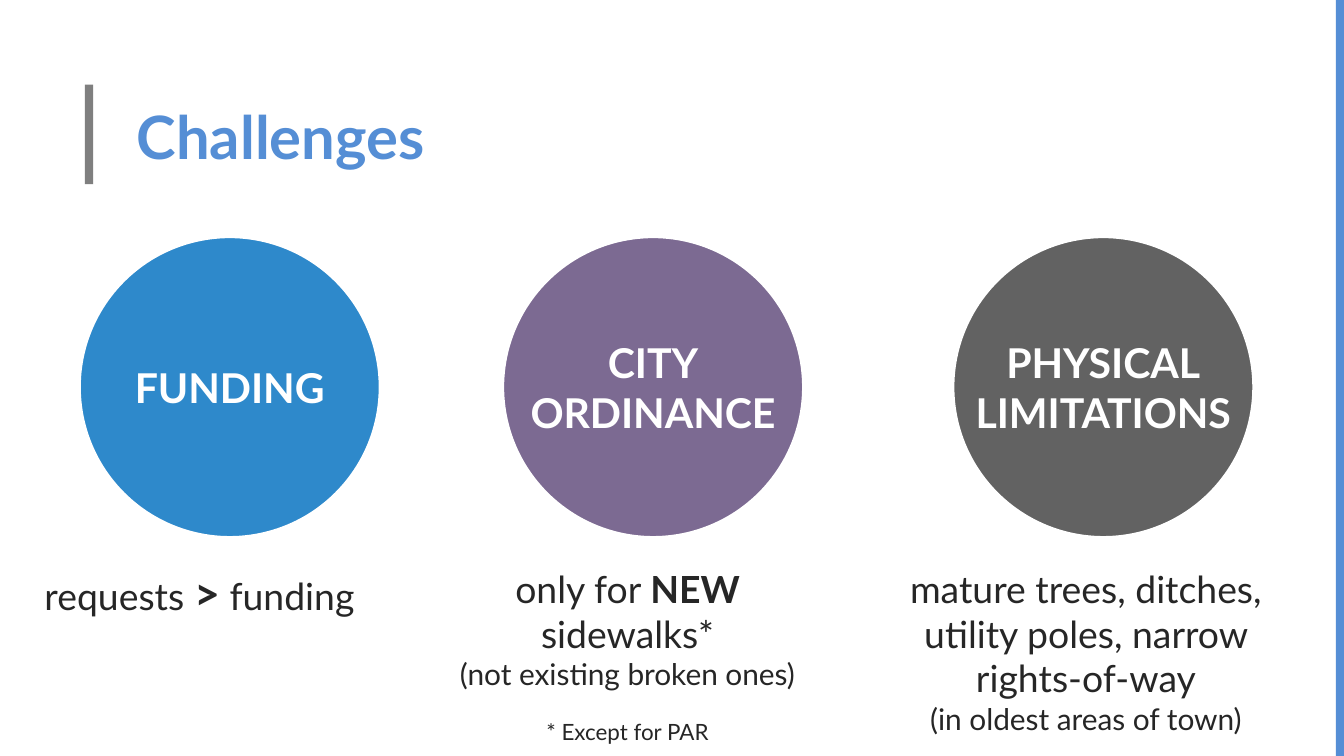
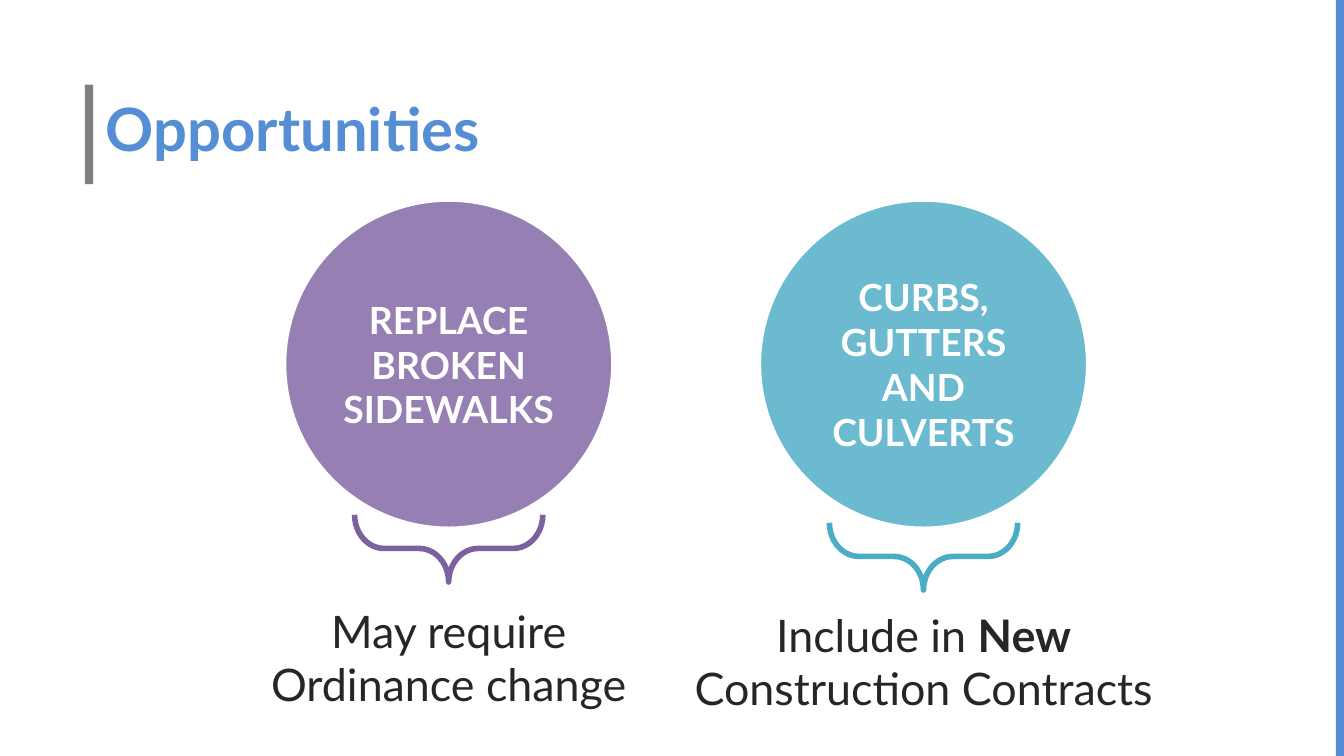
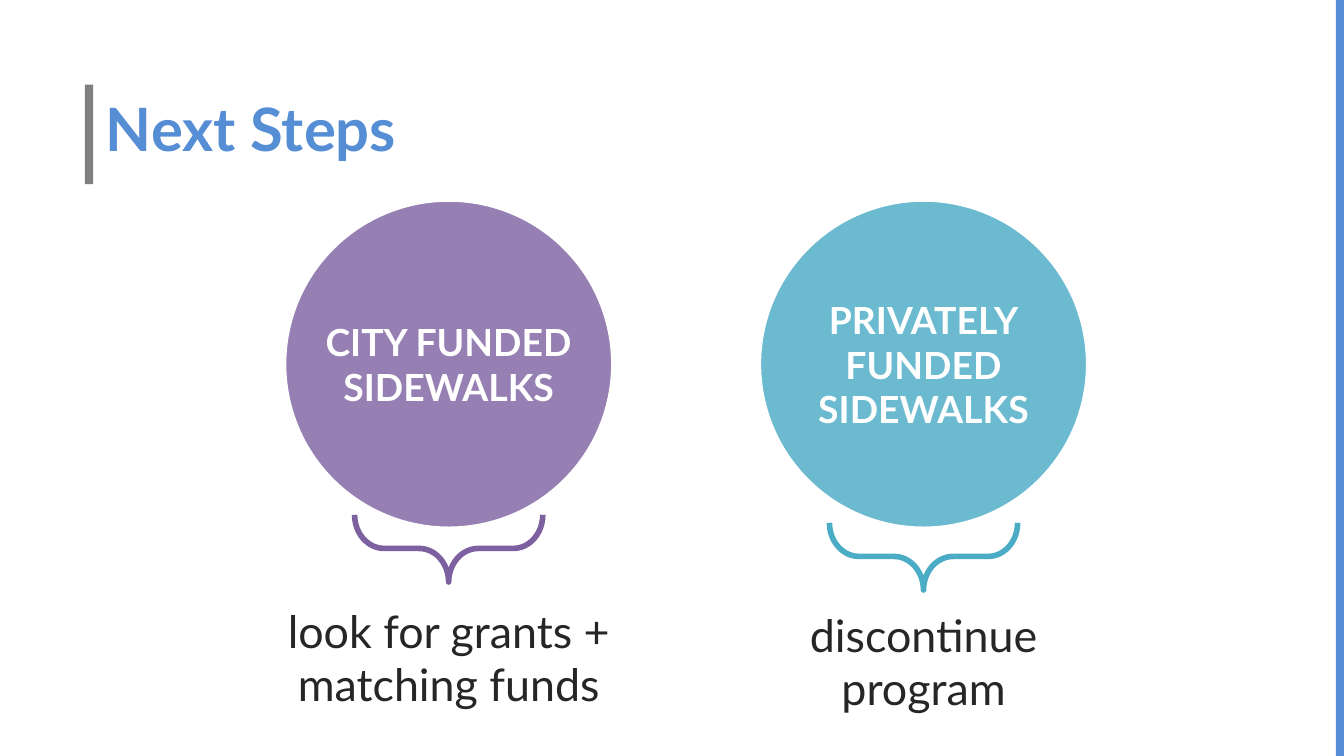
from dataclasses import dataclass

from lxml.etree import SubElement
from pptx import Presentation
from pptx.dml.color import RGBColor
from pptx.enum.shapes import MSO_SHAPE
from pptx.enum.text import MSO_ANCHOR, PP_ALIGN
from pptx.oxml.ns import qn
from pptx.shapes.autoshape import Shape
from pptx.slide import Slide
from pptx.text.text import TextFrame
from pptx.util import Pt


@dataclass(frozen=True)
class Theme:
    font: str = "Lato"
    accent: str = "558ED5"
    rule: str = "7F7F7F"
    ink: str = "262626"
    white: str = "FFFFFF"
    blue: str = "0070C0"
    plum: str = "604A7B"
    charcoal: str = "404040"
    purple: str = "8064A2"
    purple_line: str = "7D60A0"
    teal: str = "4BACC6"
    title_size: float = 32
    large: float = 24
    label_size: float = 22
    medium: float = 20
    small: float = 16
    footnote: float = 12
    circle_opacity: int = 82
    circle_border: float = 6
    brace_line: float = 3
    inset: float = 7.2


THEME = Theme()
SLIDE_W, SLIDE_H = 720, 405


@dataclass(frozen=True)
class Box:
    left: float
    top: float
    width: float
    height: float

    def lengths(self) -> tuple[Pt, Pt, Pt, Pt]:
        return Pt(self.left), Pt(self.top), Pt(self.width), Pt(self.height)


@dataclass(frozen=True)
class Run:
    text: str
    size: float | None = None
    bold: bool | None = None


@dataclass(frozen=True)
class Para:
    runs: tuple[Run, ...]
    space_before: float = 0


@dataclass(frozen=True)
class Challenge:
    label: tuple[str, ...]
    color: str
    circle_left: float
    caption_box: Box
    caption: tuple[Para, ...]


@dataclass(frozen=True)
class Column:
    """Place and colours of one circle with its brace and caption."""
    center: float
    fill: str
    brace_color: str
    brace_top: float
    caption_top: float
    caption_height: float


@dataclass(frozen=True)
class Topic:
    label: tuple[str, ...]
    caption: Para
    caption_width: float
    wrap_label: bool = False


def para(*texts: str | Run, space_before: float = 0) -> Para:
    runs = tuple(Run(t) if isinstance(t, str) else t for t in texts)
    return Para(runs, space_before)


CHALLENGES = (
    Challenge(("FUNDING",), THEME.blue, 40.3, Box(7.9, 296, 198, 71.3), (
        para("requests ", Run(">", THEME.large, True), " funding"),
    )),
    Challenge(("CITY", "ORDINANCE"), THEME.plum, 267.1, Box(227.5, 296, 217.4, 109), (
        para("only for ", Run("NEW", bold=True), " sidewalks*"),
        para(Run("(not existing broken ones)", THEME.small)),
        para(Run("* Except for PAR", THEME.footnote), space_before=14.4),
    )),
    Challenge(("PHYSICAL", "LIMITATIONS"), THEME.charcoal, 508.3, Box(470.2, 296, 223.2, 102.2), (
        para("mature trees, ditches, utility poles, narrow rights-of-way"),
        para(Run("(in oldest areas of town)", THEME.small)),
    )),
)

COLUMNS = (
    Column(240.4, THEME.purple, THEME.purple_line, 243.4, 316, 71.3),
    Column(494.8, THEME.teal, THEME.teal, 247.7, 318.2, 67.7),
)

TOPIC_SLIDES = {
    "Opportunities": (
        Topic(("REPLACE", "BROKEN", "SIDEWALKS"), para("May require Ordinance change"), 239),
        Topic(("CURBS, GUTTERS AND CULVERTS",),
              para("Include in ", Run("New", bold=True), " Construction Contracts"),
              265, wrap_label=True),
    ),
    "Next Steps": (
        Topic(("CITY FUNDED", "SIDEWALKS"), para("look for grants + matching funds"), 206),
        Topic(("PRIVATELY", "FUNDED", "SIDEWALKS"), para("discontinue program"), 156.2),
    ),
}


def rgb(color: str) -> RGBColor:
    return RGBColor.from_string(color)


def write(tf: TextFrame, paras: tuple[Para, ...], *, size: float, color: str,
          bold: bool = False, align: PP_ALIGN = PP_ALIGN.CENTER,
          anchor: MSO_ANCHOR = MSO_ANCHOR.TOP, wrap: bool = True) -> None:
    tf.word_wrap = wrap
    tf.vertical_anchor = anchor
    tf.margin_left = tf.margin_right = tf.margin_top = tf.margin_bottom = Pt(THEME.inset)
    for i, item in enumerate(paras):
        p = tf.add_paragraph() if i else tf.paragraphs[0]
        p.alignment = align
        p.space_before = Pt(item.space_before)
        for run in item.runs:
            r = p.add_run()
            r.text = run.text
            r.font.name = THEME.font
            r.font.size = Pt(run.size or size)
            r.font.bold = bold if run.bold is None else run.bold
            r.font.color.rgb = rgb(color)


def add_text(s: Slide, box: Box, *paras: Para, **fmt) -> None:
    write(s.shapes.add_textbox(*box.lengths()).text_frame, paras, **fmt)


def add_shape(s: Slide, kind: MSO_SHAPE, box: Box, *, fill: str | None = None,
              line: str | None = None, line_width: float = 0) -> Shape:
    sp = s.shapes.add_shape(kind, *box.lengths())
    sp.shadow.inherit = False
    if fill:
        sp.fill.solid()
        sp.fill.fore_color.rgb = rgb(fill)
    else:
        sp.fill.background()
    if line:
        sp.line.color.rgb = rgb(line)
        sp.line.width = Pt(line_width)
    else:
        sp.line.fill.background()
    return sp


def add_circle(s: Slide, left: float, top: float, diameter: float, color: str,
               label: tuple[str, ...], size: float, wrap: bool = False) -> None:
    sp = add_shape(s, MSO_SHAPE.OVAL, Box(left, top, diameter, diameter), fill=color,
                   line=THEME.white, line_width=THEME.circle_border)
    clr = sp.element.spPr.find(qn("a:solidFill")).find(qn("a:srgbClr"))
    SubElement(clr, qn("a:alpha")).set("val", str(THEME.circle_opacity * 1000))
    write(sp.text_frame, tuple(para(text) for text in label), size=size, color=THEME.white,
          bold=True, anchor=MSO_ANCHOR.MIDDLE, wrap=wrap)


def add_brace(s: Slide, center: float, top: float) -> Shape:
    """Draw a brace whose tip points down at the caption."""
    depth, span = 36, 100.8
    return add_shape(s, MSO_SHAPE.LEFT_BRACE, Box(center - depth / 2, top, depth, span))


def add_slide(prs: Presentation, title: str, title_box: Box) -> Slide:
    s = prs.slides.add_slide(prs.slide_layouts[6])
    add_shape(s, MSO_SHAPE.RECTANGLE, Box(45.4, 45.4, 4.5, 53.3), fill=THEME.rule)
    add_shape(s, MSO_SHAPE.RECTANGLE, Box(SLIDE_W - 4.3, 0, 4.3, SLIDE_H), fill=THEME.accent)
    add_text(s, title_box, para(title), size=THEME.title_size, color=THEME.accent,
             bold=True, align=PP_ALIGN.LEFT)
    return s


def add_challenges(prs: Presentation) -> None:
    s = add_slide(prs, "Challenges", Box(66.2, 46.1, 254.2, 54.7))
    for item in CHALLENGES:
        add_text(s, item.caption_box, *item.caption, size=THEME.medium, color=THEME.ink)
        add_circle(s, item.circle_left, 124.6, 165.6, item.color, item.label, THEME.label_size)


def add_topics(prs: Presentation, title: str, topics: tuple[Topic, ...]) -> None:
    s = add_slide(prs, title, Box(49.7, 41.8, 270.7, 59))
    diameter = 180
    for col, topic in zip(COLUMNS, topics):
        caption_box = Box(col.center - topic.caption_width / 2, col.caption_top,
                          topic.caption_width, col.caption_height)
        add_text(s, caption_box, topic.caption, size=THEME.large, color=THEME.ink)
        add_circle(s, col.center - diameter / 2, 105.1, diameter, col.fill, topic.label,
                   THEME.medium, topic.wrap_label)
        brace = add_brace(s, col.center, col.brace_top)
        brace.rotation = 270
        brace.adjustments[0] = 0.44
        brace.line.color.rgb = rgb(col.brace_color)
        brace.line.width = Pt(THEME.brace_line)


def main() -> None:
    prs = Presentation()
    prs.slide_width, prs.slide_height = Pt(SLIDE_W), Pt(SLIDE_H)
    add_challenges(prs)
    for title, topics in TOPIC_SLIDES.items():
        add_topics(prs, title, topics)
    prs.save("out.pptx")


if __name__ == "__main__":
    main()
